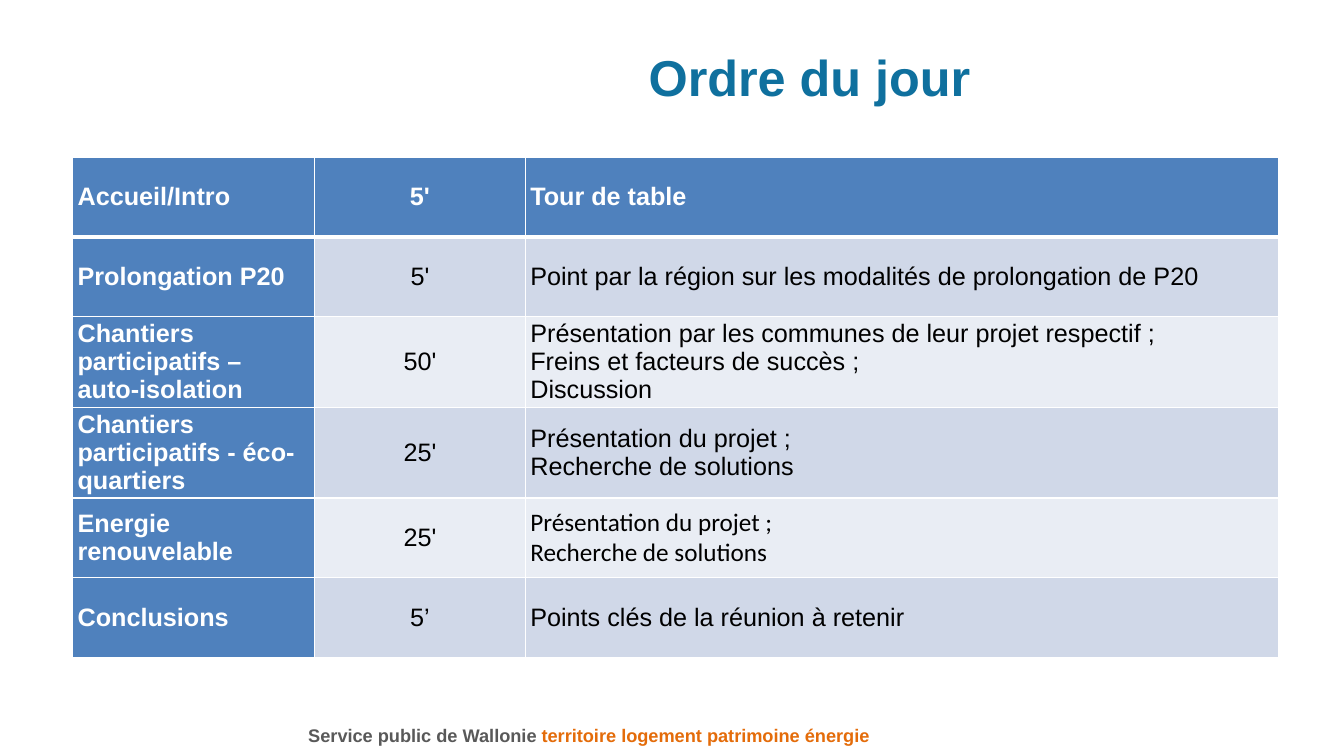
from lxml import etree
from pptx import Presentation
from pptx import util as u
from pptx.dml.color import RGBColor
from pptx.enum import text
from pptx.oxml.ns import qn

COLORS = {
    "title": "0F709E", "header": "4F81BD", "odd band": "D0D8E8",
    "even band": "E9EDF4", "white": "FFFFFF", "black": "000000",
    "gray": "595959", "orange": "E46C0A",
}
AGENDA = [
    ("Accueil/Intro", "5'", "Tour de table"),
    ("Prolongation P20", "5'", "Point par la région sur les modalités de prolongation de P20"),
    ("Chantiers participatifs – auto-isolation", "50'",
     "Présentation par les communes de leur projet respectif ;\n"
     "Freins et facteurs de succès ;\nDiscussion"),
    ("Chantiers participatifs - éco-quartiers", "25'",
     "Présentation du projet ;\nRecherche de solutions"),
    ("Energie renouvelable", "25'", "Présentation du projet ;\nRecherche de solutions"),
    ("Conclusions", "5’", "Points clés de la réunion à retenir"),
]
COLUMN_WIDTHS = [2.4, 2.09, 7.47]
ROW_HEIGHT = 0.79


def format_run(run, size, color, bold=True, name="Arial"):
    run.font.size = u.Pt(size)
    run.font.name = name
    run.font.bold = bold
    run.font.color.rgb = RGBColor.from_string(COLORS[color])


def add_borders(cell, widths):
    """Draw white borders; widths are points for left, right, top, bottom."""
    properties = cell._tc.get_or_add_tcPr()
    for index, (side, width) in enumerate(zip("LRTB", widths)):
        line = etree.Element(qn(f"a:ln{side}"), w=str(u.Pt(width)))
        fill = etree.SubElement(line, qn("a:solidFill"))
        etree.SubElement(fill, qn("a:srgbClr"), val=COLORS["white"])
        properties.insert(index, line)


presentation = Presentation()
presentation.slide_width = u.Inches(13.33)
presentation.slide_height = u.Inches(7.5)
slide = presentation.slides.add_slide(presentation.slide_layouts[5])

# Footer
footer = slide.shapes.add_textbox(u.Inches(2.57), u.Inches(7.14), u.Inches(6.15), u.Inches(0.32))
footer.text_frame.word_wrap = True
paragraph = footer.text_frame.paragraphs[0]
paragraph.alignment = text.PP_ALIGN.RIGHT
for wording, color in [("Service public de Wallonie ", "gray"),
                       ("territoire logement patrimoine énergie", "orange")]:
    run = paragraph.add_run()
    run.text = wording
    format_run(run, 13, color)

# Agenda table
table = slide.shapes.add_table(
    len(AGENDA), len(COLUMN_WIDTHS), u.Inches(0.72), u.Inches(1.56),
    u.Inches(sum(COLUMN_WIDTHS)), u.Inches(ROW_HEIGHT * len(AGENDA))).table
for column, width in zip(table.columns, COLUMN_WIDTHS):
    column.width = u.Inches(width)

for row_index, entries in enumerate(AGENDA):
    table.rows[row_index].height = u.Inches(ROW_HEIGHT)
    band = "odd band" if row_index % 2 else "even band"
    top = 3 if row_index == 1 else 1
    bottom = 3 if row_index == 0 else 1
    for column_index, wording in enumerate(entries):
        is_header = row_index == 0 or column_index == 0
        cell = table.cell(row_index, column_index)
        cell.text_frame.text = wording
        cell.vertical_anchor = text.MSO_ANCHOR.MIDDLE
        cell.margin_left = cell.margin_right = u.Inches(0.05)
        cell.margin_top = cell.margin_bottom = 0
        cell.fill.solid()
        cell.fill.fore_color.rgb = RGBColor.from_string(COLORS["header" if is_header else band])
        add_borders(cell, [1, 1, top, bottom])
        font_name = "Calibri" if (row_index, column_index) == (4, 2) else "Arial"
        for paragraph in cell.text_frame.paragraphs:
            if column_index == 1:
                paragraph.alignment = text.PP_ALIGN.CENTER
            for run in paragraph.runs:
                format_run(run, 18, "white" if is_header else "black", is_header, font_name)

# Title
title = slide.shapes.title
title.left, title.top = u.Inches(2.73), u.Inches(0.13)
title.width, title.height = u.Inches(10.6), u.Inches(1.25)
title.text_frame.text = "Ordre du jour"
title.text_frame.vertical_anchor = text.MSO_ANCHOR.MIDDLE
title.text_frame.paragraphs[0].alignment = text.PP_ALIGN.CENTER
format_run(title.text_frame.paragraphs[0].runs[0], 36, "title")

presentation.save("out.pptx")
